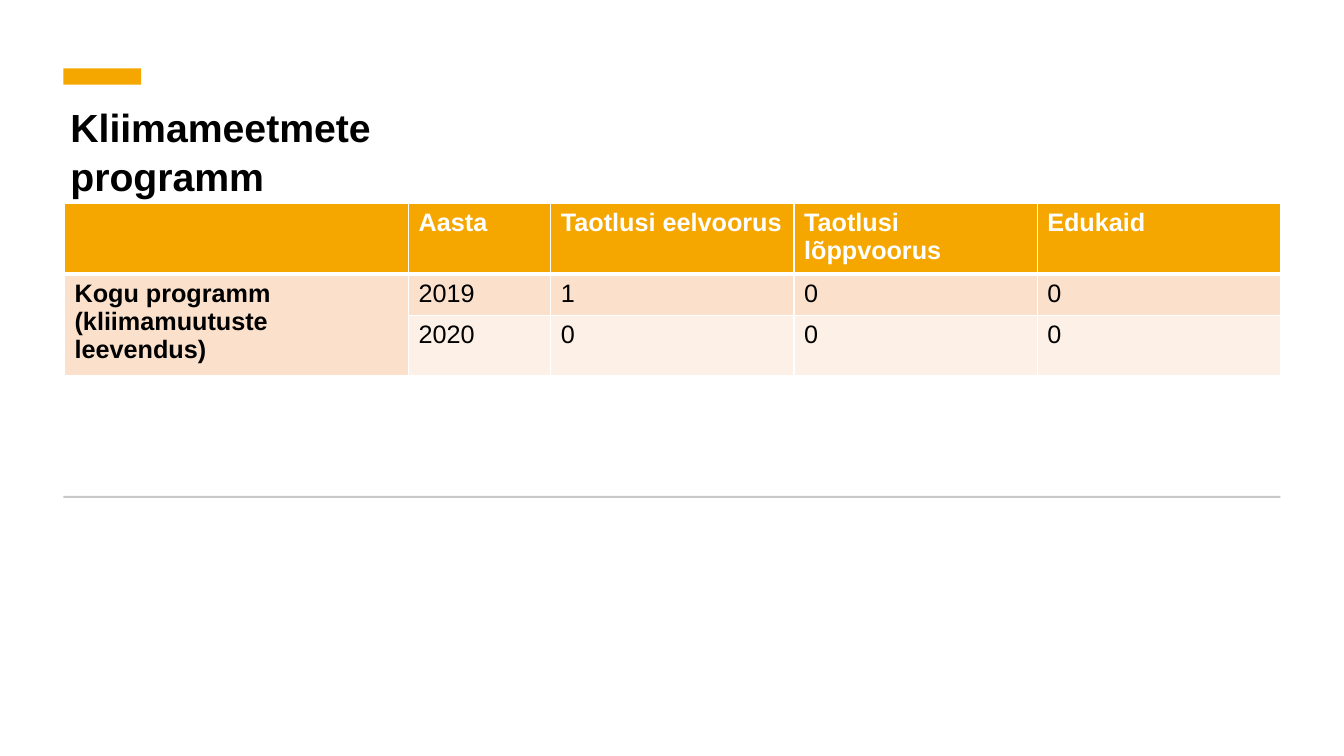
from pptx import Presentation
from pptx.dml.color import RGBColor
from pptx.enum.shapes import MSO_SHAPE
from pptx.oxml import parse_xml
from pptx.oxml.ns import nsdecls
from pptx.util import Inches, Pt

FONT = "Arial"
ORANGE, GREY, WHITE, BLACK = "F5A700", "C9C9C9", "FFFFFF", "000000"
BODY_FILLS = ["FBE1CC", "FDF1E7"]

COLUMN_WIDTHS = [3.41, 1.41, 2.41, 2.41, 2.41]
ROW_HEIGHTS = [0.68, 0.41, 0.6]
PROGRAMME = "Kogu programm (kliimamuutuste leevendus)"
ROWS = [
    ["", "Aasta", "Taotlusi eelvoorus", "Taotlusi lõppvoorus", "Edukaid"],
    [PROGRAMME, "2019", "1", "0", "0"],
    ["", "2020", "0", "0", "0"],
]


def color(hex_string):
    return RGBColor.from_string(hex_string)


def add_run(paragraph, text, size, hex_string, bold):
    run = paragraph.add_run()
    run.text = text
    run.font.name = FONT
    run.font.size = Pt(size)
    run.font.bold = bold
    run.font.color.rgb = color(hex_string)


def add_bar(slide, left, top, width, height, hex_string):
    bar = slide.shapes.add_shape(
        MSO_SHAPE.RECTANGLE, Inches(left), Inches(top), Inches(width), Inches(height))
    bar.shadow.inherit = False
    bar.fill.solid()
    bar.fill.fore_color.rgb = color(hex_string)
    bar.line.fill.background()


def add_title(slide, left, top, width, height, text):
    box = slide.shapes.add_textbox(
        Inches(left), Inches(top), Inches(width), Inches(height))
    box.text_frame.word_wrap = True
    paragraph = box.text_frame.paragraphs[0]
    paragraph.line_spacing = 1.05
    paragraph.space_after = Pt(10)
    add_run(paragraph, text, 28, BLACK, True)


def set_borders(cell, bottom_width):
    """Draw white borders, with the bottom one in its own width."""
    properties = cell._tc.get_or_add_tcPr()
    widths = {"lnL": 1, "lnR": 1, "lnT": 1, "lnB": bottom_width}
    for position, (side, width) in enumerate(widths.items()):
        properties.insert(position, parse_xml(
            f'<a:{side} {nsdecls("a")} w="{Pt(width)}"><a:solidFill>'
            f'<a:srgbClr val="{WHITE}"/></a:solidFill></a:{side}>'))


def add_results_table(slide, left, top, width, height):
    frame = slide.shapes.add_table(
        len(ROWS), len(COLUMN_WIDTHS),
        Inches(left), Inches(top), Inches(width), Inches(height))
    table = frame.table
    for column, share in zip(table.columns, COLUMN_WIDTHS):
        column.width = Inches(width * share / sum(COLUMN_WIDTHS))
    for row, share in zip(table.rows, ROW_HEIGHTS):
        row.height = Inches(height * share / sum(ROW_HEIGHTS))

    for row_index, texts in enumerate(ROWS):
        header = row_index == 0
        for column_index, text in enumerate(texts):
            cell = table.cell(row_index, column_index)
            cell.fill.solid()
            cell.fill.fore_color.rgb = color(
                ORANGE if header else BODY_FILLS[row_index - 1])
            set_borders(cell, 3 if header else 1)
            if text:
                add_run(cell.text_frame.paragraphs[0], text, 18,
                        WHITE if header else BLACK, header or column_index == 0)

    # Programme name spans both years
    programme_cell = table.cell(1, 0)
    programme_cell.merge(table.cell(2, 0))
    programme_cell.text_frame.paragraphs[0].space_after = Pt(10)


def build_slide(presentation):
    slide = presentation.slides.add_slide(presentation.slide_layouts[6])
    # Accent bar and divider
    add_bar(slide, 0.63, 0.68, 0.77, 0.16, ORANGE)
    add_bar(slide, 0.63, 4.92, 12.07, 0.02, GREY)
    # Heading and results
    add_title(slide, 0.6, 0.95, 5.06, 1.04, "Kliimameetmete programm")
    add_results_table(slide, 0.64, 2.02, 12.06, 1.69)


def main():
    presentation = Presentation()
    presentation.slide_width = Inches(13.33)
    presentation.slide_height = Inches(7.5)
    build_slide(presentation)
    presentation.save("out.pptx")


if __name__ == "__main__":
    main()
